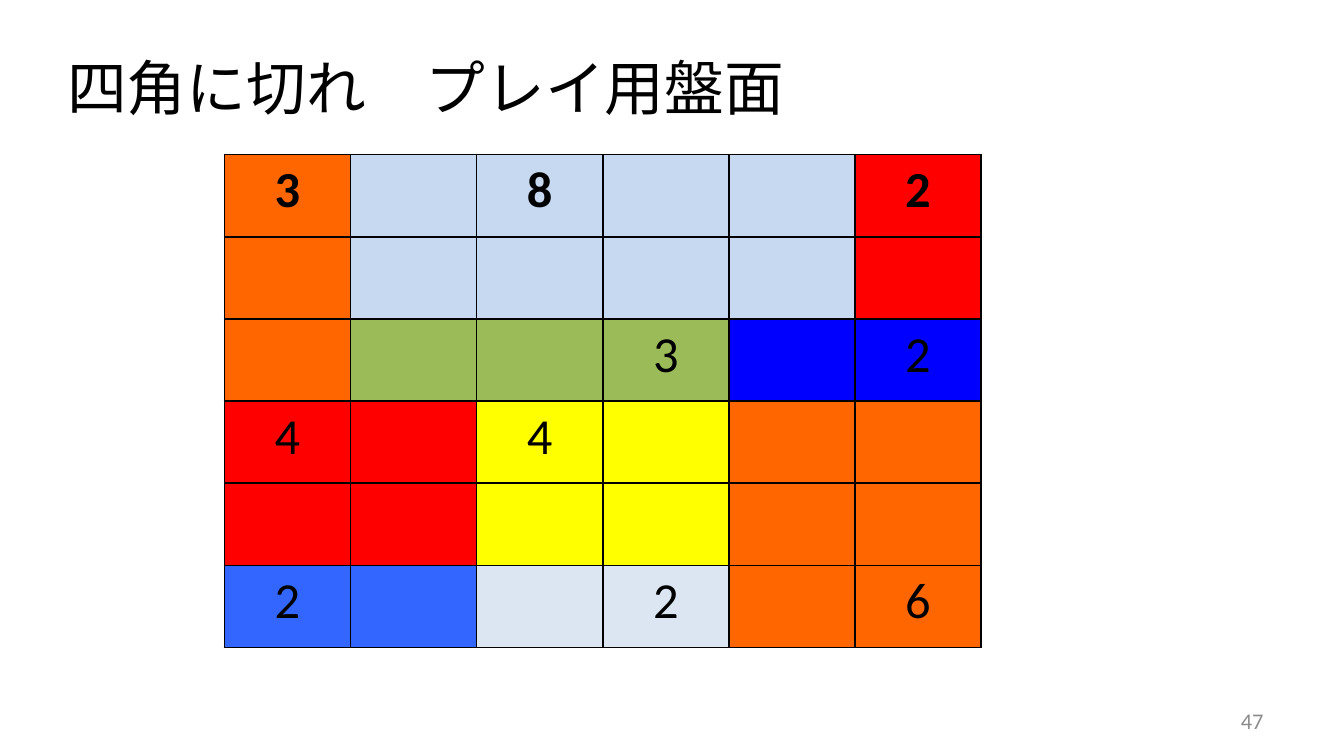
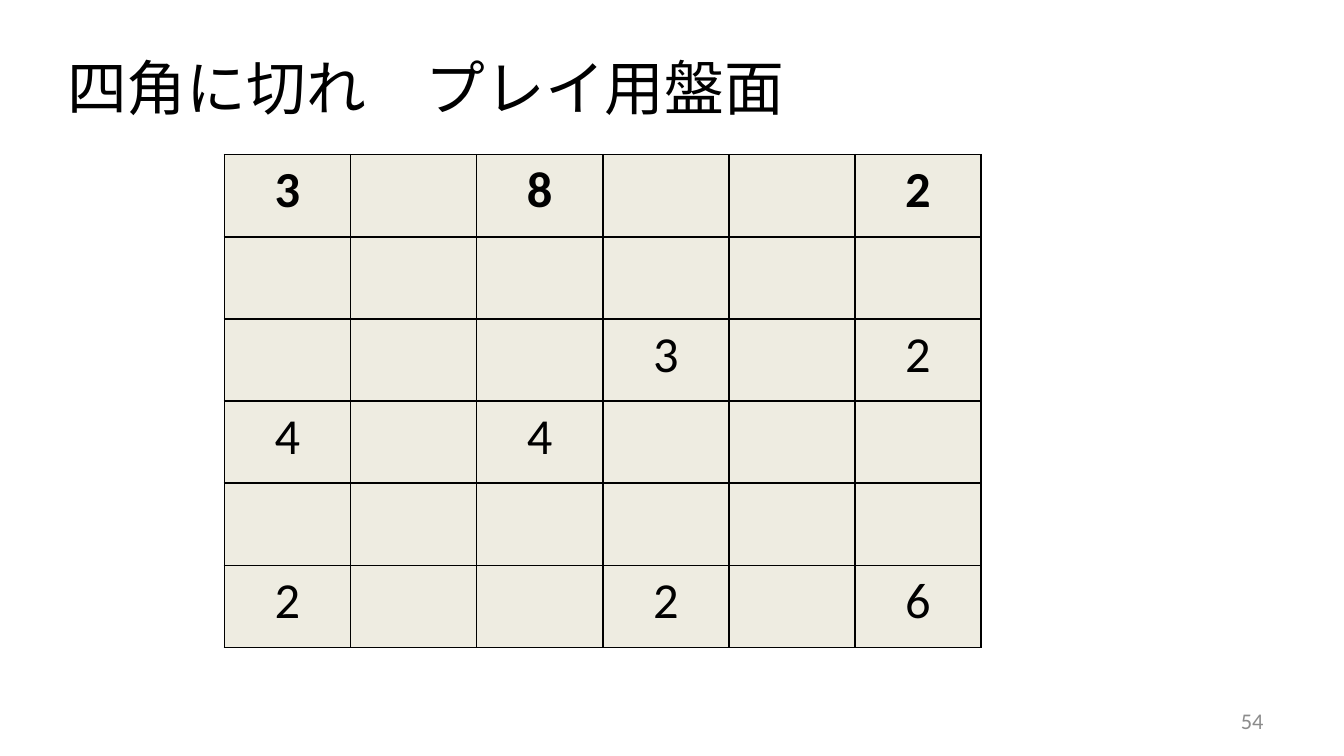
from dataclasses import dataclass

from pptx import Presentation, util as u
from pptx.dml import color
from pptx.enum import text as t
from pptx.oxml import parse_xml
from pptx.oxml.ns import nsdecls


# Shared look
@dataclass(frozen=True)
class Theme:
    font: str = "Calibri"
    ink: str = "000000"
    muted: str = "8C8C8C"
    title_size: int = 32
    number_size: int = 27
    footer_size: int = 12
    border_width: int = 1


@dataclass(frozen=True)
class Board:
    page: str
    title_width: float
    regions: tuple[str, ...]  # one letter per cell, a key of FILLS


# Puzzle content
THEME = Theme()
TITLE = "四角に切れ　プレイ用盤面"
CLUES = ("3.8..2", "......", "...3.2", "4.4...", "......", "2..2.6")
FILLS = {
    "O": "FF6600", "S": "C6D9F1", "R": "FF0000", "G": "9BBB59", "B": "0000FF",
    "Y": "FFFF00", "M": "3366FF", "P": "DCE6F2", "E": "EEECE1",
}
BOARDS = (
    Board("47", 7.36, ("OSSSSR", "OSSSSR", "OGGGBB", "RRYYOO", "RRYYOO", "MMPPOO")),
    Board("54", 5.75, ("EEEEEE",) * len(CLUES)),
)


def style(p, size: int, rgb: str, align: t.PP_ALIGN, bold: bool = False) -> None:
    p.alignment = align
    p.font.name = THEME.font
    p.font.size = u.Pt(size)
    p.font.bold = bold
    p.font.color.rgb = color.RGBColor.from_string(rgb)


def add_title(s, width: float) -> None:
    sp = s.shapes.title
    sp.left, sp.top = u.Inches(0.4), u.Inches(0.33)
    sp.width, sp.height = u.Inches(width), u.Inches(0.64)
    tf = sp.text_frame
    tf.text = TITLE
    tf.word_wrap = True
    tf.auto_size = t.MSO_AUTO_SIZE.SHAPE_TO_FIT_TEXT
    tf.vertical_anchor = t.MSO_ANCHOR.TOP
    style(tf.paragraphs[0], THEME.title_size, THEME.ink, t.PP_ALIGN.LEFT)


def add_borders(cell) -> None:
    tc_pr = cell._tc.get_or_add_tcPr()
    for side in ("lnL", "lnR", "lnT", "lnB"):
        tc_pr.append(parse_xml(
            f'<a:{side} {nsdecls("a")} w="{u.Pt(THEME.border_width)}">'
            f'<a:solidFill><a:srgbClr val="{THEME.ink}"/></a:solidFill></a:{side}>'))


def add_board(s, regions: tuple[str, ...]) -> None:
    rows, cols = len(CLUES), len(CLUES[0])
    table = s.shapes.add_table(rows, cols, u.Inches(1.67), u.Inches(1.15),
                               u.Inches(5.63), u.Inches(3.67)).table
    table.first_row = table.horz_banding = False
    for r, (clues, fills) in enumerate(zip(CLUES, regions)):
        for c, (clue, key) in enumerate(zip(clues, fills)):
            cell = table.cell(r, c)
            cell.margin_top = cell.margin_bottom = u.Inches(0.04)
            add_borders(cell)
            cell.fill.solid()
            cell.fill.fore_color.rgb = color.RGBColor.from_string(FILLS[key])
            if clue != ".":
                cell.text = clue
                style(cell.text_frame.paragraphs[0], THEME.number_size, THEME.ink,
                      t.PP_ALIGN.CENTER, bold=r == 0)


def add_page_number(s, page: str) -> None:
    sp = s.shapes.add_textbox(u.Inches(7.17), u.Inches(5.21),
                              u.Inches(2.33), u.Inches(0.3))
    tf = sp.text_frame
    tf.text = page
    tf.word_wrap = True
    tf.vertical_anchor = t.MSO_ANCHOR.MIDDLE
    style(tf.paragraphs[0], THEME.footer_size, THEME.muted, t.PP_ALIGN.RIGHT)


def main() -> None:
    prs = Presentation()
    prs.slide_width = u.Inches(10)
    prs.slide_height = prs.slide_width * 9 // 16
    title_only = prs.slide_layouts[5]
    for board in BOARDS:
        s = prs.slides.add_slide(title_only)
        add_title(s, board.title_width)
        add_board(s, board.regions)
        add_page_number(s, board.page)
    prs.save("out.pptx")


if __name__ == "__main__":
    main()
